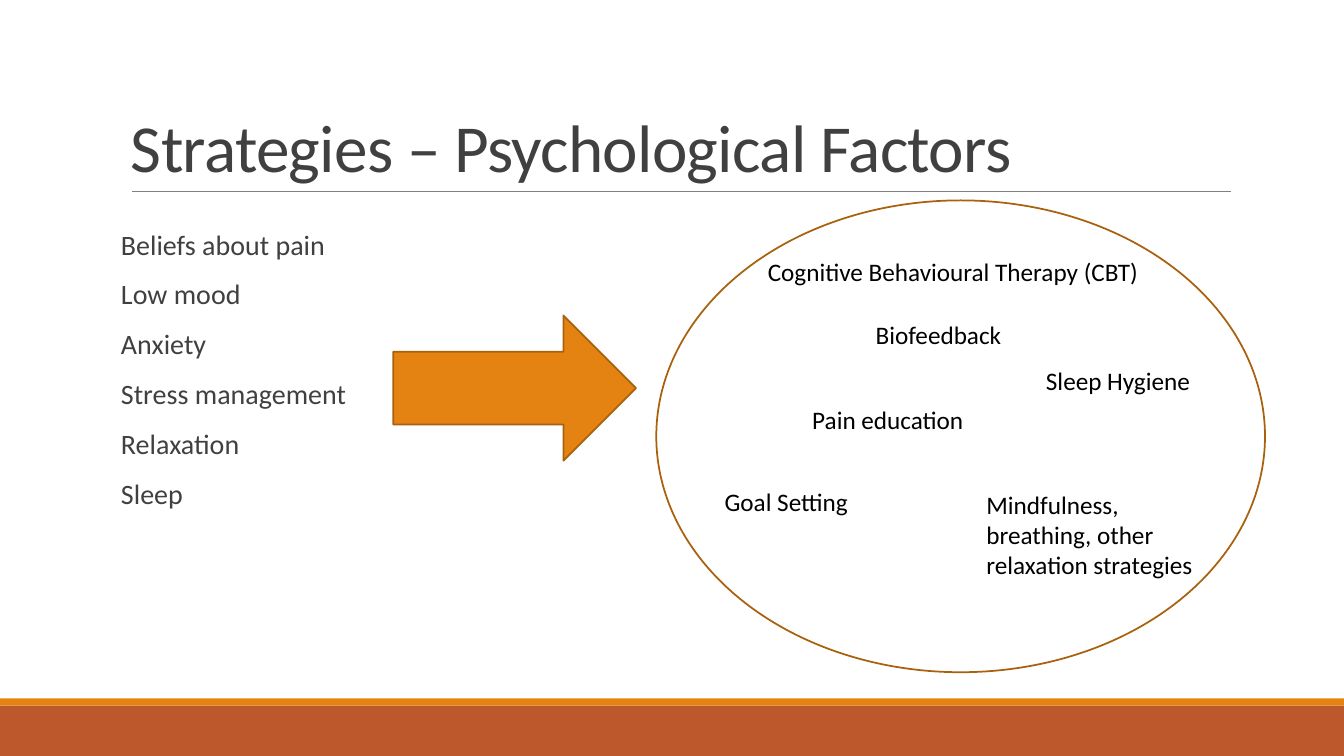
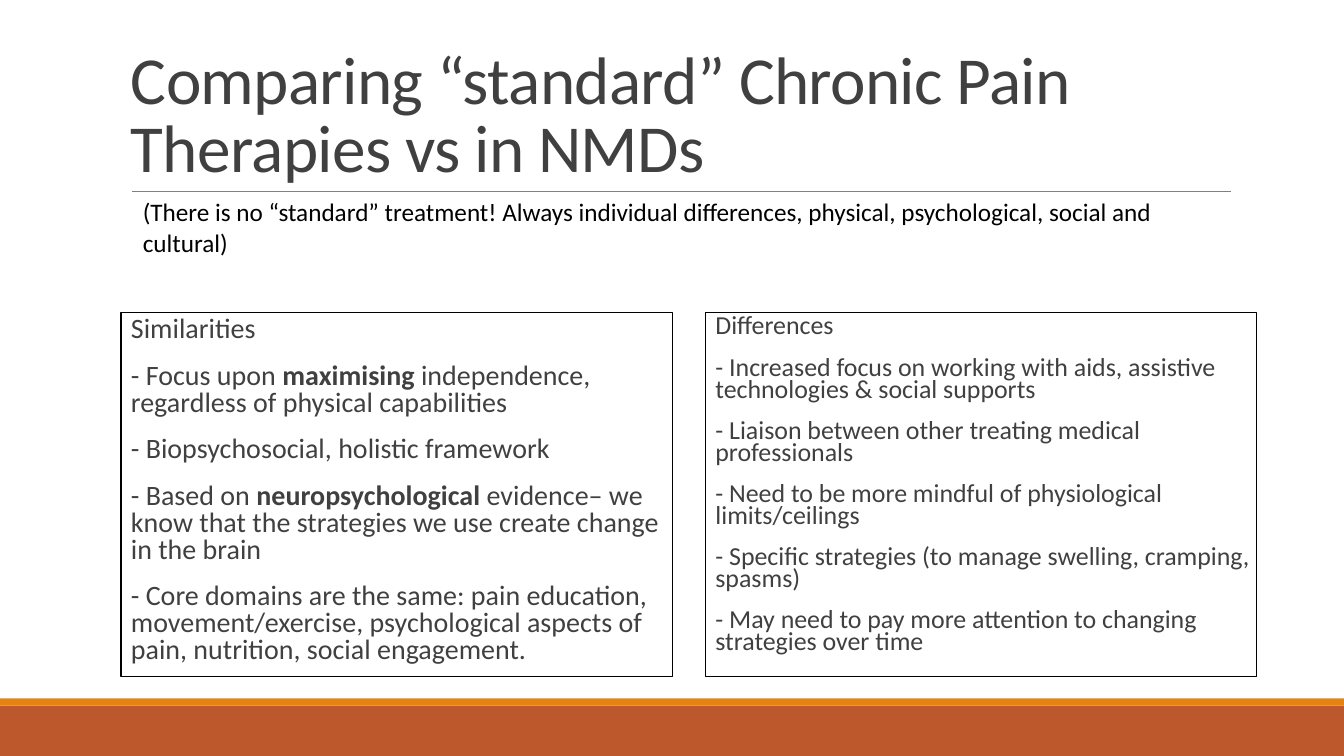
from lxml import etree
from pptx import Presentation
from pptx.dml.color import RGBColor
from pptx.enum.shapes import MSO_CONNECTOR, MSO_SHAPE
from pptx.enum.text import MSO_ANCHOR, MSO_AUTO_SIZE, PP_ALIGN
from pptx.oxml.ns import qn
from pptx.util import Cm, Pt

RECTANGLE = MSO_SHAPE.RECTANGLE
ELLIPSE = MSO_SHAPE.OVAL
RIGHT_ARROW = MSO_SHAPE.RIGHT_ARROW
STRAIGHT = MSO_CONNECTOR.STRAIGHT
TOP, BOTTOM = MSO_ANCHOR.TOP, MSO_ANCHOR.BOTTOM
LEFT = PP_ALIGN.LEFT
NO_AUTOFIT = MSO_AUTO_SIZE.NONE

# Shared look; all lengths are in centimetres
FONT = "Calibri"
RUST, ORANGE, BROWN = "BD582C", "E48312", "A9610D"
DARK_GREY, GREY, BLACK = "404040", "808080", "000000"
SLIDE_WIDTH, SLIDE_HEIGHT = 33.87, 19.05
CONTENT_LEFT = 3.05
RULE_Y = 4.83
TITLE_TOP = 0.79
TITLE_ONLY = 5


def color(hex_string):
    return RGBColor.from_string(hex_string)


def lengths(*values):
    return [Cm(value) for value in values]


def add_run(paragraph, text, size, hex_string, bold=False):
    run = paragraph.add_run()
    run.text = text
    run.font.name = FONT
    run.font.size = Pt(size)
    run.font.bold = bold
    run.font.color.rgb = color(hex_string)
    return run


def set_frame(frame, anchor=TOP, insets=(0.25, 0.13, 0.25, 0.13)):
    frame.word_wrap = True
    frame.auto_size = NO_AUTOFIT
    frame.vertical_anchor = anchor
    (frame.margin_left, frame.margin_top,
     frame.margin_right, frame.margin_bottom) = lengths(*insets)


def add_shape(slide, kind, box, fill=None, line=None, width=1.25):
    shape = slide.shapes.add_shape(kind, *lengths(*box))
    shape.shadow.inherit = False
    if fill:
        shape.fill.solid()
        shape.fill.fore_color.rgb = color(fill)
    else:
        shape.fill.background()
    if line:
        shape.line.color.rgb = color(line)
        shape.line.width = Pt(width)
    else:
        shape.line.fill.background()
    return shape


def add_rule(slide, left, right, y):
    rule = slide.shapes.add_connector(STRAIGHT, *lengths(left, y, right, y))
    rule.line.color.rgb = color(GREY)
    rule.line.width = Pt(0.5)
    etree.SubElement(rule._element.spPr, qn("a:effectLst"))


def add_label(slide, box, text):
    label = slide.shapes.add_textbox(*lengths(*box))
    set_frame(label.text_frame)
    add_run(label.text_frame.paragraphs[0], text, 18, BLACK)


def fill_list(shape, items, size, line_spacing, left_inset=0):
    """Write one paragraph per item; an item is a list of (text, bold) runs."""
    frame = shape.text_frame
    set_frame(frame, insets=(left_inset, 0.13, 0, 0.13))
    for index, runs in enumerate(items):
        paragraph = frame.add_paragraph() if index else frame.paragraphs[0]
        paragraph.alignment = LEFT
        paragraph.line_spacing = line_spacing
        paragraph.space_before = Pt(12)
        paragraph.space_after = Pt(2)
        for text, bold in runs:
            add_run(paragraph, text, size, DARK_GREY, bold)


def plain(*texts):
    return [[(text, False)] for text in texts]


def add_base_slide(presentation, title_text):
    slide = presentation.slides.add_slide(presentation.slide_layouts[TITLE_ONLY])
    # Bottom bands and title rule
    add_shape(slide, RECTANGLE, (0, 17.78, SLIDE_WIDTH, 1.27), RUST)
    add_shape(slide, RECTANGLE, (0, 17.6, SLIDE_WIDTH, 0.18), ORANGE)
    add_rule(slide, 3.33, 31.01, RULE_Y)
    # Title
    title = slide.shapes.title
    title.left, title.top, title.width, title.height = lengths(
        CONTENT_LEFT, TITLE_TOP, 27.94, RULE_Y - TITLE_TOP)
    set_frame(title.text_frame, BOTTOM)
    paragraph = title.text_frame.paragraphs[0]
    paragraph.alignment = LEFT
    paragraph.line_spacing = 0.85
    run = add_run(paragraph, title_text, 48, DARK_GREY)
    run.font._element.set("spc", "-50")
    return slide


def build_strategies(presentation):
    slide = add_base_slide(presentation, "Strategies – Psychological Factors")

    # Factors on the left
    factors = slide.shapes.add_textbox(*lengths(CONTENT_LEFT, 5.69, 15.85, 10.62))
    fill_list(factors, plain("Beliefs about pain", "Low mood", "Anxiety",
                             "Stress management", "Relaxation", "Sleep"), 20, 0.9)

    # Arrow to the strategies
    add_shape(slide, RIGHT_ARROW, (9.91, 7.95, 6.12, 3.66), ORANGE, BROWN)
    add_shape(slide, ELLIPSE, (16.54, 5.05, 15.34, 11.89), line=BROWN)
    strategies = [
        ((19.1, 6.32, 12.09, 1.03), "Cognitive Behavioural Therapy (CBT)"),
        ((21.82, 7.92, 4.04, 1.03), "Biofeedback"),
        ((20.22, 10.06, 5.16, 1.03), "Pain education"),
        ((26.11, 9.07, 4.5, 1.03), "Sleep Hygiene"),
        ((24.61, 12.19, 6.07, 2.57),
         "Mindfulness, breathing, other relaxation strategies"),
        ((18.01, 12.12, 4.93, 1.03), "Goal Setting"),
    ]
    for box, text in strategies:
        add_label(slide, box, text)


def build_comparison(presentation):
    slide = add_base_slide(
        presentation, "Comparing “standard” Chronic Pain Therapies vs in NMDs")
    add_label(slide, (3.35, RULE_Y, 27.64, 1.8),
              "(There is no “standard” treatment! Always individual differences, "
              "physical, psychological, social and cultural)")

    # Two outlined panels: left edge, text size, line spacing, items
    similarities = [
        [("Similarities", False)],
        [("- Focus upon ", False), ("maximising", True),
         (" independence, regardless of physical capabilities", False)],
        [("- Biopsychosocial, holistic framework", False)],
        [("- Based on ", False), ("neuropsychological ", True),
         ("evidence– we know that the strategies we use create change "
          "in the brain", False)],
        [("- Core domains are the same: pain education, movement/exercise, "
          "psychological aspects of pain, nutrition, social engagement.", False)],
    ]
    differences = plain(
        "Differences",
        "- Increased focus on working with aids, assistive technologies "
        "& social supports",
        "- Liaison between other treating medical professionals",
        "- Need to be more mindful of physiological limits/ceilings",
        "- Specific strategies (to manage swelling, cramping, spasms)",
        "- May need to pay more attention to changing strategies over time",
    )
    panels = [(CONTENT_LEFT, 20, 0.8, similarities),
              (17.78, 18.5, 0.7, differences)]
    for left, size, line_spacing, items in panels:
        panel = add_shape(slide, RECTANGLE, (left, 7.87, 13.89, 9.17),
                          line=BLACK, width=0.75)
        fill_list(panel, items, size, line_spacing, left_inset=0.25)


def main():
    presentation = Presentation()
    presentation.slide_width, presentation.slide_height = lengths(
        SLIDE_WIDTH, SLIDE_HEIGHT)
    build_strategies(presentation)
    build_comparison(presentation)
    presentation.save("out.pptx")


if __name__ == "__main__":
    main()
